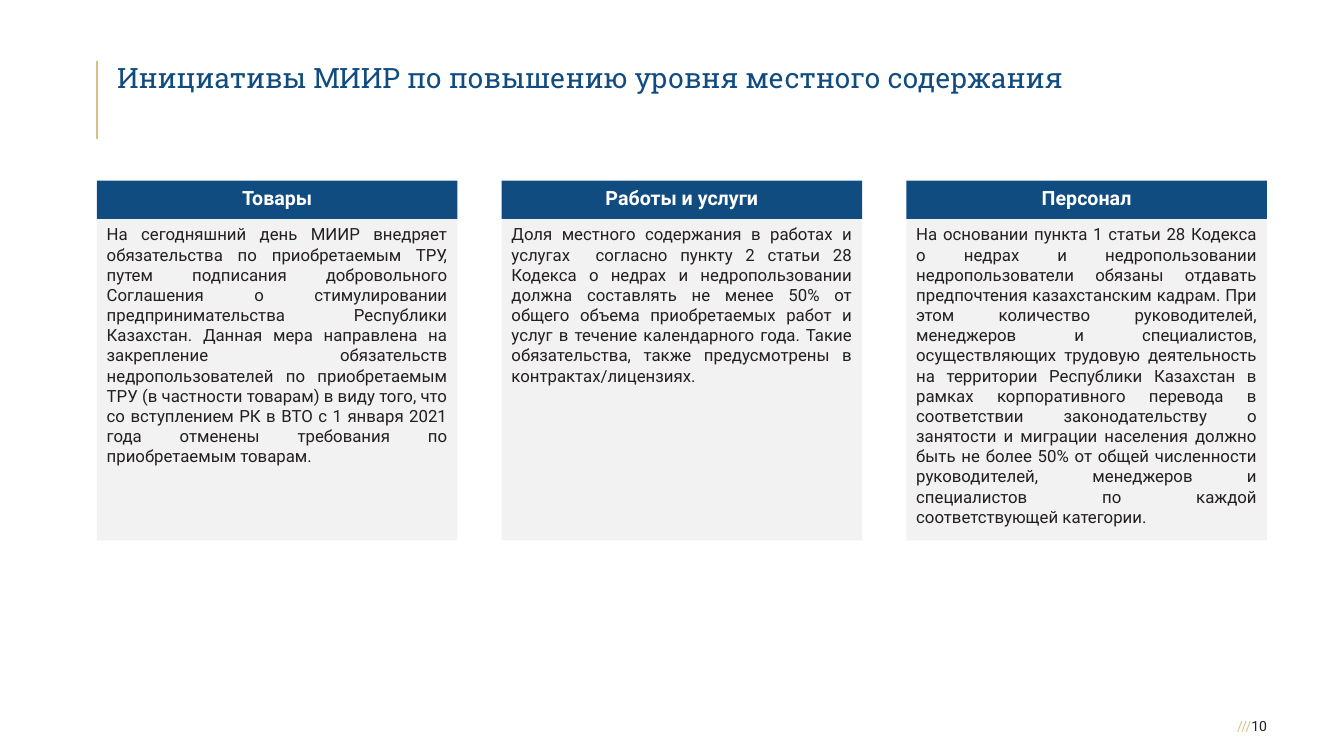
import pptx
import pptx.util
import pptx.dml.color
import pptx.enum.shapes
import pptx.enum.text
import pptx.oxml.ns
import lxml.etree

Cm = pptx.util.Cm
ALIGN = pptx.enum.text.PP_ALIGN
ANCHOR = pptx.enum.text.MSO_ANCHOR
FIT = pptx.enum.text.MSO_AUTO_SIZE

NAVY, GOLD, INK, PALE, WHITE = "114C81", "D9BE87", "231F20", "F2F2F2", "FFFFFF"
LEFT = 2.44
STEP = 10.2
WIDE = 9.09
HEAD = 0.97

TITLE = "Инициативы МИИР по повышению уровня местного содержания"
CARDS = [
    ("Товары",
     "На сегодняшний день МИИР внедряет обязательства по приобретаемым ТРУ, "
     "путем подписания добровольного Соглашения о стимулировании "
     "предпринимательства Республики Казахстан. Данная мера направлена на "
     "закрепление обязательств недропользователей по приобретаемым ТРУ "
     "(в частности товарам) в виду того, что со вступлением РК в ВТО "
     "с 1 января 2021 года отменены требования по приобретаемым товарам."),
    ("Работы и услуги",
     "Доля местного содержания в работах и услугах  согласно пункту 2 статьи 28 "
     "Кодекса о недрах и недропользовании должна составлять не менее 50% от "
     "общего объема приобретаемых работ и услуг в течение календарного года. "
     "Такие обязательства, также предусмотрены в контрактах/лицензиях."),
    ("Персонал",
     "На основании пункта 1 статьи 28 Кодекса о недрах и недропользовании "
     "недропользователи обязаны отдавать предпочтения казахстанским кадрам. "
     "При этом количество руководителей, менеджеров и специалистов, "
     "осуществляющих трудовую деятельность на территории Республики Казахстан "
     "в рамках корпоративного перевода в соответствии законодательству "
     "о занятости и миграции населения должно быть не более 50% от общей "
     "численности руководителей, менеджеров и специалистов по каждой "
     "соответствующей категории."),
]


def color(code):
    return pptx.dml.color.RGBColor.from_string(code)


def style(run, size, code, bold=False, face="Roboto"):
    run.font.name = face
    run.font.size = pptx.util.Pt(size)
    run.font.bold = bold
    run.font.color.rgb = color(code)


def frame(shape, pads, anchor=ANCHOR.TOP):
    """Wrap the text and set left, top, right and bottom insets in cm."""
    text = shape.text_frame
    text.word_wrap = True
    text.auto_size = FIT.NONE
    text.vertical_anchor = anchor
    (text.margin_left, text.margin_top,
     text.margin_right, text.margin_bottom) = map(Cm, pads)
    return text


def add_title(slide, left, top, width, height):
    line = slide.shapes.add_connector(
        pptx.enum.shapes.MSO_CONNECTOR.STRAIGHT,
        Cm(left), Cm(top), Cm(left), Cm(top + height))
    line.line.color.rgb = color(GOLD)
    line.line.width = pptx.util.Pt(1.5)
    lxml.etree.SubElement(line._element.spPr, pptx.oxml.ns.qn("a:effectLst"))

    title = slide.shapes.title
    title.left, title.top = Cm(left), Cm(top)
    title.width, title.height = Cm(width), Cm(height)
    text = frame(title, (0.51, 0, 0, 0.41))
    text.text = TITLE
    para = text.paragraphs[0]
    para.alignment = ALIGN.LEFT
    style(para.runs[0], 20, NAVY, face="Roboto Slab")


def add_block(slide, left, top, width, height, fill, pads, words):
    block = slide.shapes.add_shape(
        pptx.enum.shapes.MSO_SHAPE.RECTANGLE,
        Cm(left), Cm(top), Cm(width), Cm(height))
    block.shadow.inherit = False
    block.fill.solid()
    block.fill.fore_color.rgb = color(fill)
    block.line.fill.background()
    text = frame(block, pads)
    text.text = words
    return text


def add_card(slide, left, top, width, height, name, words):
    head = add_block(slide, left, top, width, HEAD, NAVY, [0.13] * 4, name)
    para = head.paragraphs[0]
    para.alignment = ALIGN.CENTER
    style(para.runs[0], 14, WHITE, bold=True)

    body = add_block(slide, left, top + HEAD, width, height - HEAD,
                     PALE, (0.25, 0.13, 0.25, 0.13), words)
    body.auto_size = FIT.SHAPE_TO_FIT_TEXT
    para = body.paragraphs[0]
    para.alignment = ALIGN.JUSTIFY
    para.space_after = pptx.util.Pt(3)
    style(para.runs[0], 12, INK)


def add_page(slide, left, top, width, height):
    box = slide.shapes.add_textbox(Cm(left), Cm(top), Cm(width), Cm(height))
    para = frame(box, [0] * 4, ANCHOR.MIDDLE).paragraphs[0]
    para.alignment = ALIGN.RIGHT
    for words, code in (("///", GOLD), ("10", INK)):
        run = para.add_run()
        run.text = words
        style(run, 10, code)


def main():
    deck = pptx.Presentation()
    deck.slide_width, deck.slide_height = Cm(33.87), Cm(19.05)
    slide = deck.slides.add_slide(deck.slide_layouts.get_by_name("Title Only"))
    add_title(slide, LEFT, 1.53, 24.5, 1.98)
    for place, (name, words) in enumerate(CARDS):
        add_card(slide, LEFT + place * STEP, 4.55, WIDE, 9.07, name, words)
    add_page(slide, 30.93, 17.78, 1, 1.02)
    deck.save("out.pptx")


if __name__ == "__main__":
    main()
